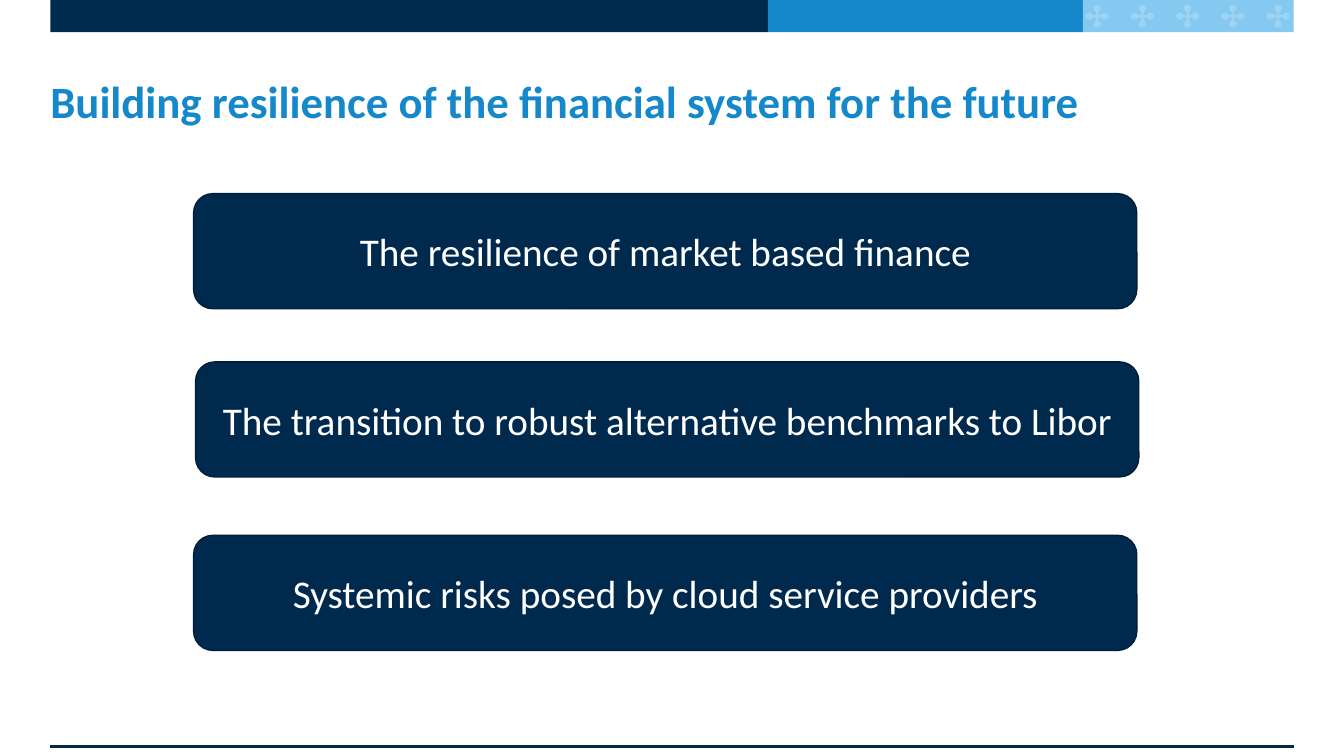
from math import asin, cos, pi, sin

from lxml import etree
from pptx import Presentation
from pptx.dml.color import RGBColor
from pptx.enum.shapes import MSO_CONNECTOR, MSO_SHAPE
from pptx.enum.text import MSO_ANCHOR, PP_ALIGN
from pptx.oxml.ns import qn
from pptx.util import Cm, Pt

RECTANGLE = MSO_SHAPE.RECTANGLE
ROUNDED = MSO_SHAPE.ROUNDED_RECTANGLE
STRAIGHT = MSO_CONNECTOR.STRAIGHT
MIDDLE = MSO_ANCHOR.MIDDLE
CENTER = PP_ALIGN.CENTER

NAVY = RGBColor(0x00, 0x29, 0x4E)
DARK_NAVY = RGBColor(0x00, 0x1E, 0x3A)
BLUE = RGBColor(0x14, 0x88, 0xCA)
LIGHT_BLUE = RGBColor(0x85, 0xC9, 0xF0)
WHITE = RGBColor(0xFF, 0xFF, 0xFF)


def fill_plain(shape, color):
    shape.shadow.inherit = False
    shape.fill.solid()
    shape.fill.fore_color.rgb = color
    shape.line.fill.background()


def add_text(shape, text, size, color, bold=False):
    frame = shape.text_frame
    frame.word_wrap = True
    frame.vertical_anchor = MIDDLE
    para = frame.paragraphs[0]
    span = para.add_run()
    span.text = text
    span.font.name = "Calibri"
    span.font.size = Pt(size)
    span.font.bold = bold
    span.font.color.rgb = color
    return para


deck = Presentation()
deck.slide_width = Cm(33.87)
deck.slide_height = Cm(19.05)
page = deck.slides.add_slide(deck.slide_layouts[6])
shapes = page.shapes

# Colour band along the top edge
for left, right, color in [(1.27, 19.35, NAVY), (19.35, 27.29, BLUE), (27.29, 32.6, LIGHT_BLUE)]:
    band = shapes.add_shape(RECTANGLE, Cm(left), 0, Cm(right - left), Cm(0.81))
    fill_plain(band, color)

# Row of pale crosses, each with four round-ended arms
ARM_HALF, ARM_LENGTH, KNOB_RADIUS = 0.03, 0.2, 0.09
KNOB_STEPS = 16
sweep = pi - asin(ARM_HALF / KNOB_RADIUS)
cross_outline = []
for arm in range(4):
    heading = arm * pi / 2
    for step in range(KNOB_STEPS + 1):
        angle = heading - sweep + 2 * sweep * step / KNOB_STEPS
        cross_outline.append((ARM_LENGTH * cos(heading) + KNOB_RADIUS * cos(angle),
                              ARM_LENGTH * sin(heading) + KNOB_RADIUS * sin(angle)))
    corner = heading + pi / 4
    cross_outline.append((ARM_HALF * 2 ** 0.5 * cos(corner), ARM_HALF * 2 ** 0.5 * sin(corner)))

for index in range(5):
    center_x = 27.65 + 1.14 * index
    points = [(Cm(center_x + x), Cm(0.41 + y)) for x, y in cross_outline]
    builder = shapes.build_freeform(*points[0], scale=1.0)
    builder.add_line_segments(points[1:], close=True)
    cross = builder.convert_to_shape()
    fill_plain(cross, WHITE)
    fill_color = cross.fill._xPr.find(qn("a:solidFill"))[0]
    etree.SubElement(fill_color, qn("a:alpha"), val="20000")

# Line along the bottom edge
footer_line = shapes.add_connector(STRAIGHT, Cm(1.27), Cm(18.8), Cm(32.6), Cm(18.8))
footer_line.line.color.rgb = NAVY
footer_line.line.width = Pt(2.25)
etree.SubElement(footer_line._element.spPr, qn("a:effectLst"))

title = shapes.add_textbox(Cm(1.27), Cm(1.27), Cm(31.32), Cm(2.54))
frame = title.text_frame
frame.margin_left = frame.margin_top = frame.margin_right = frame.margin_bottom = 0
add_text(title, "Building resilience of the financial system for the future", 32, BLUE, bold=True)

topics = [
    (4.88, 4.88, "The resilience of market based finance"),
    (4.93, 9.12, "The transition to robust alternative benchmarks to Libor"),
    (4.88, 13.49, "Systemic risks posed by cloud service providers"),
]
for left, top, text in topics:
    box = shapes.add_shape(ROUNDED, Cm(left), Cm(top), Cm(23.77), Cm(2.9))
    fill_plain(box, NAVY)
    box.line.color.rgb = DARK_NAVY
    box.line.width = Pt(1)
    add_text(box, text, 28, WHITE).alignment = CENTER

deck.save("out.pptx")
